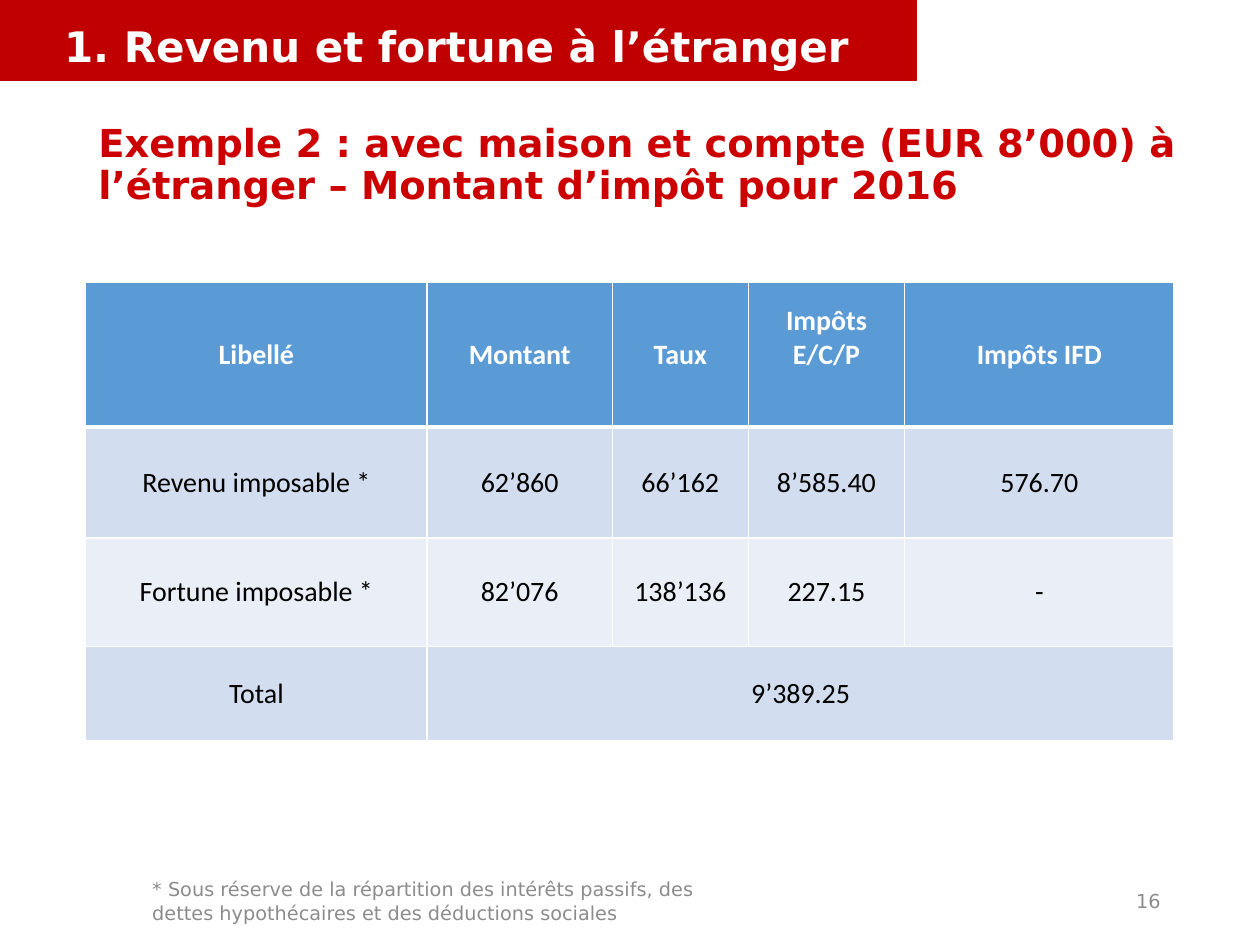
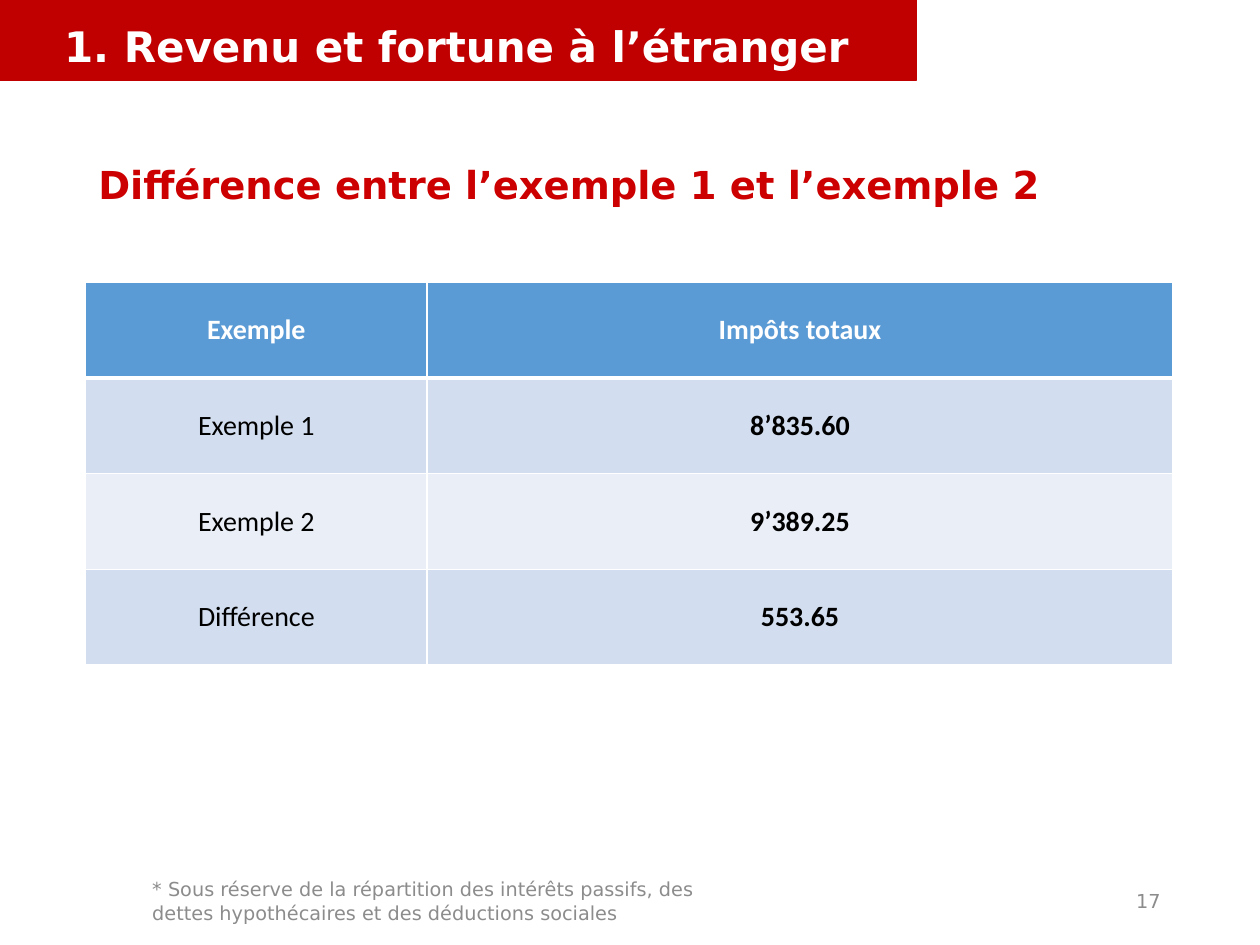
from dataclasses import dataclass
from lxml.etree import SubElement
from pptx import Presentation
from pptx.dml.color import RGBColor
from pptx.enum.shapes import MSO_SHAPE
from pptx.enum.text import MSO_ANCHOR, MSO_AUTO_SIZE, PP_ALIGN
from pptx.oxml.ns import qn
from pptx.util import Inches, Pt

SANS, BODY = "DejaVu Sans", "Calibri"
BAND, TITLE, GREY = "C00000", "CC0000", "8C8C8C"
WHITE, BLACK = "FFFFFF", "000000"
HEAD, ODD, EVEN = "5B9BD5", "D2DEEF", "EAEFF7"
TOPIC = "1. Revenu et fortune à l’étranger"
NOTE = ("* Sous réserve de la répartition des intérêts passifs, "
        "des dettes hypothécaires et des déductions sociales")


@dataclass(frozen=True)
class Style:
    """Look of a text."""
    font: str
    size: float
    color: str
    bold: bool = False
    align: PP_ALIGN = PP_ALIGN.LEFT
    anchor: MSO_ANCHOR = MSO_ANCHOR.MIDDLE
    spacing: float = 1.0


@dataclass(frozen=True)
class Grid:
    """Sizes and values of a table."""
    cols: list[float]
    rows: list[float]
    cells: list[list[str]]
    strong: bool = False
    total: bool = False
    raised: int | None = None


@dataclass(frozen=True)
class Page:
    """Content of one slide."""
    number: int
    title: str
    grid: Grid


TOPIC_STYLE = Style(SANS, 24, WHITE, True, anchor=MSO_ANCHOR.BOTTOM, spacing=0.9)
TITLE_STYLE = Style(SANS, 22, TITLE, True, anchor=MSO_ANCHOR.BOTTOM, spacing=0.9)
NOTE_STYLE = Style(SANS, 11, GREY)
NUMBER_STYLE = Style(SANS, 11, GREY, align=PP_ALIGN.RIGHT)

PAGES = [
    Page(16, "Exemple 2 : avec maison et compte (EUR 8’000) à l’étranger "
             "– Montant d’impôt pour 2016",
         Grid([2.71, 1.47, 1.08, 1.24, 2.14], [1.15, 0.88, 0.86, 0.75], [
             ["Libellé", "Montant", "Taux", "Impôts E/C/P", "Impôts IFD"],
             ["Revenu imposable *", "62’860", "66’162", "8’585.40", "576.70"],
             ["Fortune imposable *", "82’076", "138’136", "227.15", "-"],
             ["Total", "9’389.25"],
         ], total=True, raised=3)),
    Page(17, "Différence entre l’exemple 1 et l’exemple 2",
         Grid([2.71, 5.92], [0.76] * 4, [
             ["Exemple", "Impôts totaux"],
             ["Exemple 1", "8’835.60"],
             ["Exemple 2", "9’389.25"],
             ["Différence", "553.65"],
         ], strong=True)),
]


def color(code: str) -> RGBColor:
    """Turn a hex string into a colour."""
    return RGBColor.from_string(code)


def write(frame, text: str, style: Style) -> None:
    """Put one styled paragraph in a text frame."""
    frame.text = text
    line = frame.paragraphs[0]
    line.alignment = style.align
    line.line_spacing = style.spacing
    line.font.name = style.font
    line.font.size = Pt(style.size)
    line.font.bold = style.bold
    line.font.color.rgb = color(style.color)


def fit(shape, text: str, style: Style) -> None:
    """Fill a shape with wrapped text of fixed size."""
    frame = shape.text_frame
    frame.word_wrap = True
    frame.auto_size = MSO_AUTO_SIZE.NONE
    frame.vertical_anchor = style.anchor
    write(frame, text, style)


def label(slide, box: tuple, text: str, style: Style) -> None:
    """Add a text box."""
    fit(slide.shapes.add_textbox(*map(Inches, box)), text, style)


def band(slide) -> None:
    """Draw the red band at the top."""
    bar = slide.shapes.add_shape(
        MSO_SHAPE.RECTANGLE, 0, 0, Inches(7.27), Inches(0.64))
    bar.shadow.inherit = False
    bar.fill.solid()
    bar.fill.fore_color.rgb = color(BAND)
    bar.line.color.rgb = color(BAND)
    bar.line.width = Pt(0.75)


def border(cell, row: int) -> None:
    """Give a cell white edges, thick under the header."""
    props = cell._tc.get_or_add_tcPr()
    top, low = (3 if row == 1 else 1), (3 if row == 0 else 1)
    for side, width in zip("LRTB", (1, 1, top, low)):
        edge = SubElement(props, qn(f"a:ln{side}"), w=str(Pt(width)))
        fill = SubElement(edge, qn("a:solidFill"))
        SubElement(fill, qn("a:srgbClr"), val=WHITE)


def table(slide, grid: Grid) -> None:
    """Draw a table with a header and banded rows."""
    sizes = len(grid.rows), len(grid.cols)
    table = slide.shapes.add_table(
        *sizes, Inches(0.68), Inches(2.24),
        Inches(sum(grid.cols)), Inches(sum(grid.rows))).table
    for col, width in zip(table.columns, grid.cols):
        col.width = Inches(width)
    for row, height in zip(table.rows, grid.rows):
        row.height = Inches(height)
    for r in range(sizes[0]):
        for c in range(sizes[1]):
            cell = table.cell(r, c)
            border(cell, r)
            cell.fill.solid()
            cell.fill.fore_color.rgb = color(
                HEAD if r == 0 else ODD if r % 2 else EVEN)
            cell.vertical_anchor = MSO_ANCHOR.MIDDLE
    if grid.total:
        table.cell(sizes[0] - 1, 1).merge(table.cell(sizes[0] - 1, sizes[1] - 1))
    for r, texts in enumerate(grid.cells):
        for c, text in enumerate(texts):
            bold = r == 0 or (grid.strong and c > 0)
            style = Style(BODY, 16, BLACK if r else WHITE, bold, PP_ALIGN.CENTER)
            write(table.cell(r, c).text_frame, text, style)
    if grid.raised is not None:
        table.cell(0, grid.raised).margin_bottom = Inches(0.32)


def build(deck, page: Page) -> None:
    """Add one slide."""
    slide = deck.slides.add_slide(deck.slide_layouts[5])
    band(slide)
    title = slide.shapes.title
    title.left, title.top, title.width, title.height = map(
        Inches, (0.68, 1.16, 8.78, 0.54))
    fit(title, page.title, TITLE_STYLE)
    label(slide, (0.41, 0.08, 8.62, 0.54), TOPIC, TOPIC_STYLE)
    table(slide, page.grid)
    label(slide, (7.06, 6.95, 2.25, 0.4), str(page.number), NUMBER_STYLE)
    label(slide, (1.11, 6.95, 4.81, 0.4), NOTE, NOTE_STYLE)


def main() -> None:
    """Build and save the deck."""
    deck = Presentation()
    deck.slide_width, deck.slide_height = Inches(10), Inches(7.5)
    for page in PAGES:
        build(deck, page)
    deck.save("out.pptx")


if __name__ == "__main__":
    main()
